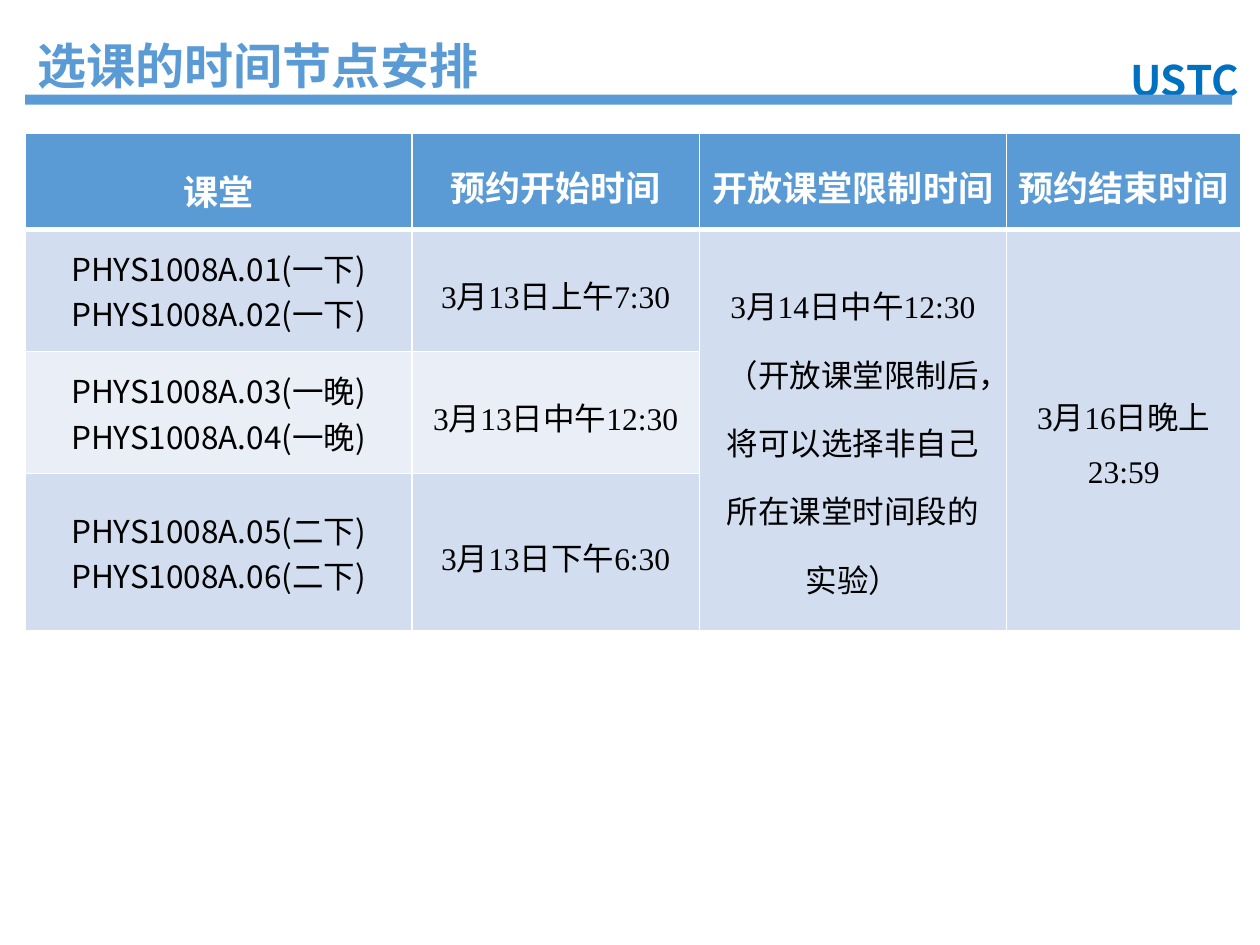
from lxml.etree import SubElement
from pptx import Presentation
from pptx.dml.color import RGBColor
from pptx.enum.shapes import MSO_SHAPE
from pptx.enum.text import MSO_ANCHOR, PP_ALIGN
from pptx.oxml.ns import qn
from pptx.util import Inches, Pt

SANS, SERIF, ARIAL = "Noto Sans CJK SC", "Times New Roman", "Arial"
BLUE, WHITE, BLACK = "5B9BD5", "FFFFFF", "000000"
BANDS = ["D2DEEF", "EAEFF7"]

TITLE = "选课的时间节点安排"
SCHOOL = "USTC"
HEADERS = ["课堂", "预约开始时间", "开放课堂限制时间", "预约结束时间"]
SESSIONS = [
    (["PHYS1008A.01(一下)", "PHYS1008A.02(一下)"], "3月13日上午7:30"),
    (["PHYS1008A.03(一晚)", "PHYS1008A.04(一晚)"], "3月13日中午12:30"),
    (["PHYS1008A.05(二下)", "PHYS1008A.06(二下)"], "3月13日下午6:30"),
]
SHARED = {
    2: ["3月14日中午12:30", "（开放课堂限制后，将可以选择非自己所在课堂时间段的实验）"],
    3: ["3月16日晚上23:59"],
}
COLS = [3.07, 2.28, 2.44, 1.86]
ROWS = [0.76, 0.97, 0.97, 1.25]

HEAD = {"size": Pt(20), "bold": True, "name": SANS, "color": WHITE}
BODY = {"size": Pt(18), "bold": False, "name": SANS, "color": BLACK}
TIME = {**BODY, "name": SERIF}


def rgb(value):
    return RGBColor.from_string(value)


def write(tf, lines, fmt, align=PP_ALIGN.CENTER, spacing=1.0):
    tf.word_wrap = True
    for i, line in enumerate(lines):
        p = tf.paragraphs[0] if i == 0 else tf.add_paragraph()
        p.alignment = align
        p.line_spacing = spacing
        r = p.add_run()
        r.text = line
        for key, value in fmt.items():
            if key == "color":
                r.font.fill.solid()
                r.font.fill.fore_color.rgb = rgb(value)
            else:
                setattr(r.font, key, value)
        SubElement(r.font._element, qn("a:ea"), typeface=SANS)
    return r


def add_text(s, box, lines, fmt, **layout):
    sp = s.shapes.add_textbox(*map(Inches, box))
    return write(sp.text_frame, lines, fmt, **layout)


def add_line(parent, tag, width, index=None):
    ln = SubElement(parent, qn(tag), w=str(Pt(width)))
    fill = SubElement(ln, qn("a:solidFill"))
    SubElement(fill, qn("a:srgbClr"), val=WHITE)
    if index is not None:
        parent.insert(index, ln)


def style_cell(cell, row, color):
    tcPr = cell._tc.get_or_add_tcPr()
    widths = {"L": 1, "R": 1, "T": 3 if row == 1 else 1, "B": 3 if row == 0 else 1}
    for side, width in widths.items():
        add_line(tcPr, f"a:ln{side}", width)
    cell.fill.solid()
    cell.fill.fore_color.rgb = rgb(color)


def fill_cell(cell, lines, fmt, spacing=1.0, tight=False, anchor=MSO_ANCHOR.MIDDLE):
    cell.vertical_anchor = anchor
    if tight:
        cell.margin_left = cell.margin_right = Inches(0.07)
        cell.margin_top = cell.margin_bottom = 0
    write(cell.text_frame, lines, fmt, spacing=spacing)


def add_schedule(s):
    frame = s.shapes.add_table(len(ROWS), len(COLS), Inches(0.2), Inches(1.06),
                               Inches(sum(COLS)), Inches(sum(ROWS)))
    table = frame.table
    for col, width in zip(table.columns, COLS):
        col.width = Inches(width)
    for row, height in zip(table.rows, ROWS):
        row.height = Inches(height)
    for i in range(len(ROWS)):
        for j in range(len(COLS)):
            band = 0 if j in SHARED else (i - 1) % 2
            style_cell(table.cell(i, j), i, BLUE if i == 0 else BANDS[band])

    fill_cell(table.cell(0, 0), HEADERS[:1], {**HEAD, "name": ARIAL}, 1.5, anchor=MSO_ANCHOR.TOP)
    for j, header in enumerate(HEADERS[1:], 1):
        fill_cell(table.cell(0, j), [header], HEAD, 1.2, tight=True)
    for i, (classes, start) in enumerate(SESSIONS, 1):
        fill_cell(table.cell(i, 0), classes, BODY)
        fill_cell(table.cell(i, 1), [start], TIME, 1.2, tight=True)
    for j, lines in SHARED.items():
        table.cell(1, j).merge(table.cell(len(SESSIONS), j))
        fill_cell(table.cell(1, j), lines, TIME, 1.5)


def main():
    prs = Presentation()
    prs.slide_width, prs.slide_height = Inches(10), Inches(7.5)
    s = prs.slides.add_slide(prs.slide_layouts[6])

    r = add_text(s, (8.6, 0.38, 1.6, 0.5), [SCHOOL],
                 {**HEAD, "size": Pt(24), "color": "0070C0"})
    add_line(r.font._element, "a:ln", 0.75, index=0)

    bar = s.shapes.add_shape(MSO_SHAPE.RECTANGLE, *map(Inches, (0.2, 0.75, 9.58, 0.08)))
    bar.shadow.inherit = False
    bar.fill.solid()
    bar.fill.fore_color.rgb = rgb(BLUE)
    bar.line.fill.background()

    add_text(s, (0.2, 0, 9.01, 0.81), [TITLE], {**HEAD, "size": Pt(28), "color": BLUE},
             align=PP_ALIGN.JUSTIFY, spacing=1.5)
    add_schedule(s)
    prs.save("out.pptx")


if __name__ == "__main__":
    main()
